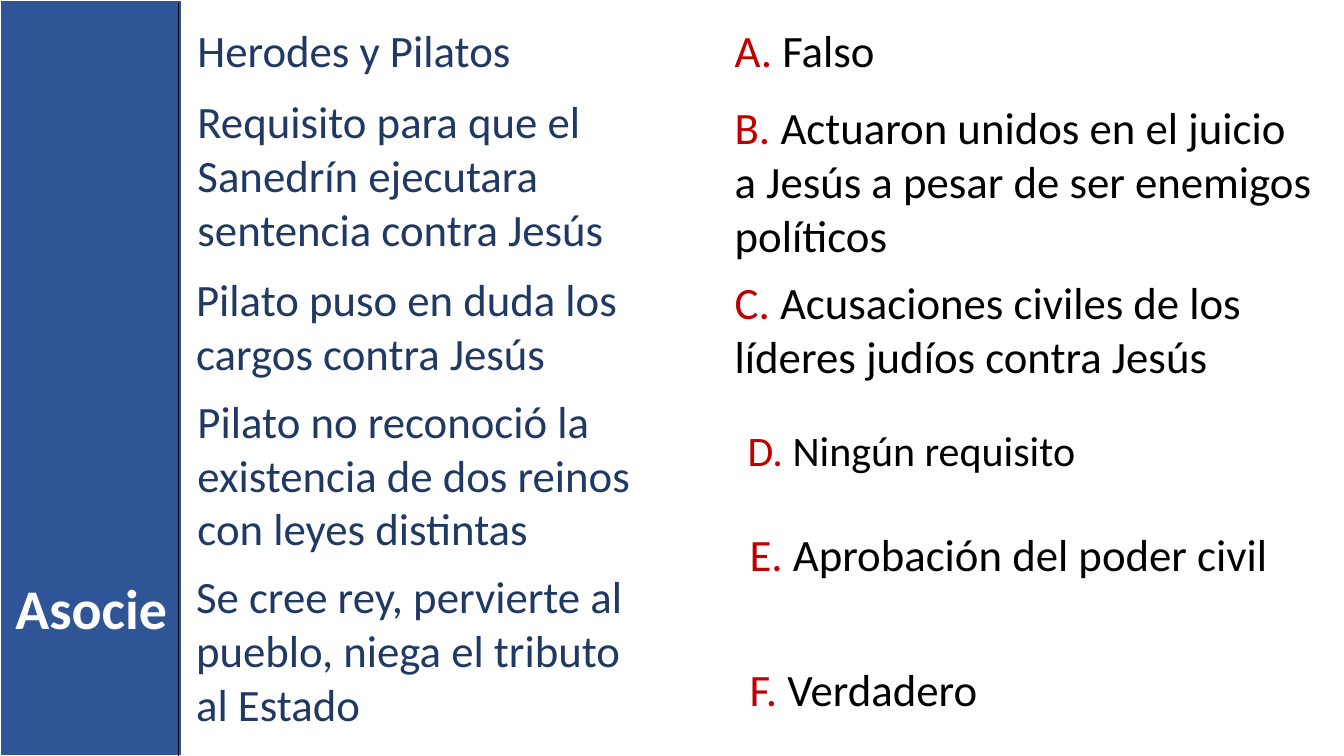
from lxml.etree import SubElement
from pptx import Presentation
from pptx.dml.color import RGBColor
from pptx.enum.shapes import MSO_CONNECTOR, MSO_SHAPE
from pptx.enum.text import MSO_ANCHOR, MSO_AUTO_SIZE, PP_ALIGN
from pptx.oxml.ns import qn
from pptx.util import Pt

BLUE = RGBColor(0x2F, 0x55, 0x97)
NAVY = RGBColor(0x20, 0x38, 0x64)
RED = RGBColor(0xC0, 0x00, 0x00)
BLACK = RGBColor(0x00, 0x00, 0x00)
WHITE = RGBColor(0xFF, 0xFF, 0xFF)

WIDE, HIGH = 960, 540
BAR = 130.3
ROW = {1: 46.1, 2: 84.8, 3: 123.6}  # box height by line count

# left, top, width, line count, text
CLUES = [
    (134, 13, 352, 1, "Herodes y Pilatos"),
    (134, 63.5, 371.5, 3,
     "Requisito para que el Sanedrín ejecutara sentencia contra Jesús"),
    (133, 190.4, 321, 2, "Pilato puso en duda los cargos contra Jesús"),
    (134, 277.6, 355.7, 3,
     "Pilato no reconoció la existencia de dos reinos con leyes distintas"),
    (133, 402.7, 321, 3,
     "Se cree rey, pervierte al pueblo, niega el tributo al Estado"),
]

# left, top, width, line count, size, text; letters follow the order
ANSWERS = [
    (517.7, 13, 429, 1, 32, "Falso"),
    (517.7, 67.8, 429, 3, 32,
     "Actuaron unidos en el juicio a Jesús a pesar de ser enemigos políticos"),
    (517.7, 192.7, 403, 2, 32,
     "Acusaciones civiles de los líderes judíos contra Jesús"),
    (527, 299.8, 376.6, 1, 30, "Ningún requisito"),
    (528.3, 373, 398, 1, 32, "Aprobación del poder civil"),
    (528.3, 468.9, 408, 1, 32, "Verdadero"),
]


def place(shape, left, top, width, height):
    shape.left, shape.top = Pt(left), Pt(top)
    shape.width, shape.height = Pt(width), Pt(height)


def write(frame, *runs, size=32, bold=False, align=PP_ALIGN.LEFT,
          fit=MSO_AUTO_SIZE.SHAPE_TO_FIT_TEXT):
    """Fill a text frame with (text, colour) runs."""
    frame.word_wrap = True
    frame.auto_size = fit
    frame.vertical_anchor = MSO_ANCHOR.TOP
    para = frame.paragraphs[0]
    para.alignment = align
    for text, color in runs:
        run = para.add_run()
        run.text = text
        run.font.name = "Calibri"
        run.font.size = Pt(size)
        run.font.bold = bold
        run.font.color.rgb = color


def add_text(slide, left, top, width, lines, *runs, **style):
    box = slide.shapes.add_textbox(
        Pt(left), Pt(top), Pt(width), Pt(ROW[lines]))
    write(box.text_frame, *runs, **style)


def add_bar(slide):
    bar = slide.shapes.add_shape(
        MSO_SHAPE.RECTANGLE, 0, 0, Pt(BAR), Pt(HIGH))
    bar.shadow.inherit = False
    bar.fill.solid()
    bar.fill.fore_color.rgb = BLUE
    bar.line.color.rgb = WHITE
    bar.line.width = Pt(1.5)
    return bar


def add_rule(slide, left, top, bottom):
    rule = slide.shapes.add_connector(
        MSO_CONNECTOR.STRAIGHT, Pt(left), Pt(top), Pt(left), Pt(bottom))
    rule.line.color.rgb = BLACK
    rule.line.width = Pt(1)
    SubElement(rule.element.spPr, qn("a:effectLst"))


def main():
    deck = Presentation()
    deck.slide_width, deck.slide_height = Pt(WIDE), Pt(HIGH)
    slide = deck.slides.add_slide(deck.slide_layouts[5])

    # Side bar with the title in front of it
    title = slide.shapes.title
    title.element.addprevious(add_bar(slide).element)
    place(title, 0, 406, BAR, 55.7)
    write(title.text_frame, ("Asocie", WHITE), size=40, bold=True,
          align=PP_ALIGN.CENTER, fit=MSO_AUTO_SIZE.NONE)

    # Clues on the left
    for left, top, width, lines, text in CLUES:
        add_text(slide, left, top, width, lines, (text, NAVY))

    # Lettered answers on the right
    for mark, answer in zip("ABCDEF", ANSWERS):
        left, top, width, lines, size, text = answer
        add_text(slide, left, top, width, lines,
                 (f"{mark}. ", RED), (text, BLACK), size=size)

    # Edge of the bar
    add_rule(slide, 127.6, 2, HIGH)
    deck.save("out.pptx")


if __name__ == "__main__":
    main()
